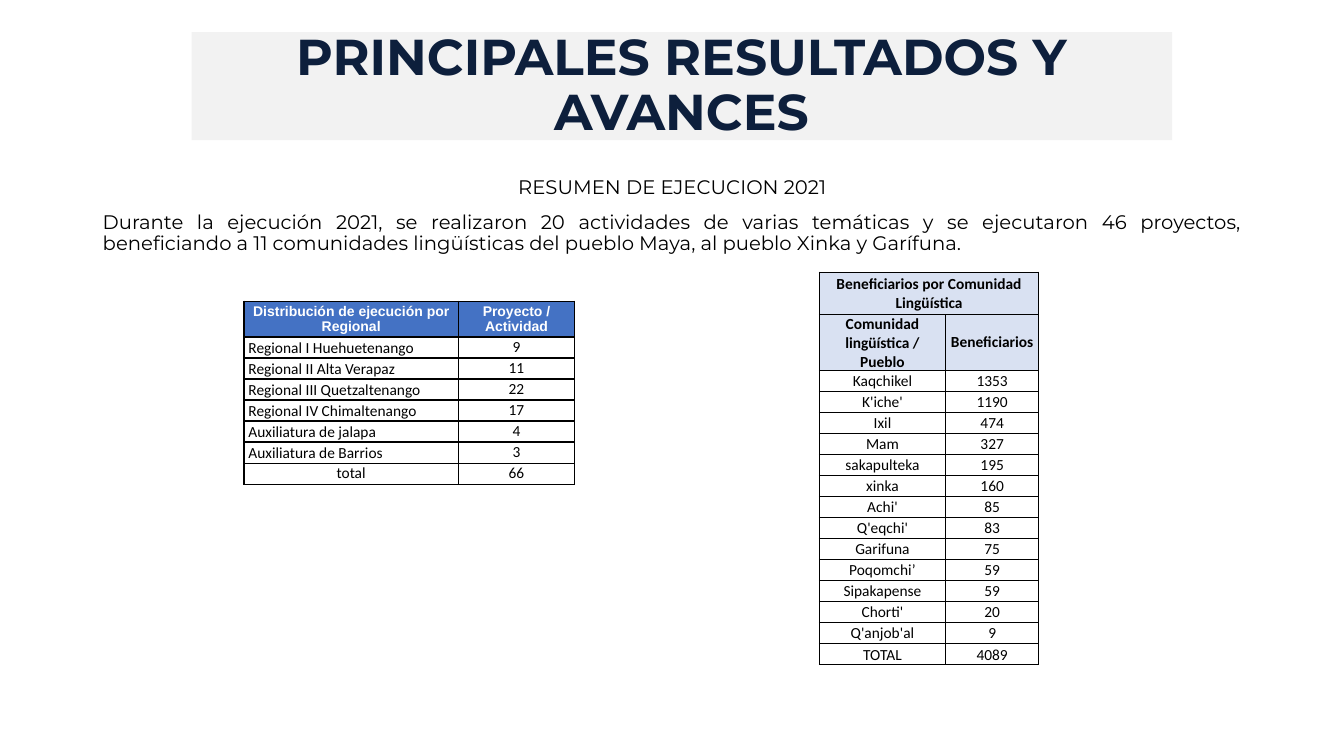
from dataclasses import dataclass

import lxml.etree
import pptx
import pptx.dml.color
import pptx.enum.shapes
import pptx.enum.text
import pptx.oxml.ns
import pptx.util

Cm, Pt = pptx.util.Cm, pptx.util.Pt
RGBColor = pptx.dml.color.RGBColor
PP_ALIGN = pptx.enum.text.PP_ALIGN
ANCHOR = pptx.enum.text.MSO_ANCHOR
qn = pptx.oxml.ns.qn

BLACK = RGBColor(0x00, 0x00, 0x00)
WHITE = RGBColor(0xFF, 0xFF, 0xFF)
NAVY = RGBColor(0x0D, 0x1F, 0x3C)
LIGHT_GREY = RGBColor(0xF2, 0xF2, 0xF2)
BLUE = RGBColor(0x44, 0x72, 0xC4)
PALE_BLUE = RGBColor(0xD9, 0xE1, 0xF2)

ROW_HEIGHT = 0.53
CELL_MARGIN = 0.11


@dataclass(frozen=True)
class TextStyle:
    font: str
    size: float
    color: RGBColor
    bold: bool = False


@dataclass(frozen=True)
class Paragraph:
    text: str
    align: PP_ALIGN
    space_before: float = 0


@dataclass(frozen=True)
class TableData:
    """Lengths are in centimetres; a header of one text spans the whole row."""
    left: float
    top: float
    col_widths: tuple[float, ...]
    headers: tuple[tuple[str, ...], ...]
    header_height: float
    header_style: TextStyle
    header_fill: RGBColor
    rows: tuple[tuple[str, int], ...]
    total: tuple[str, int]
    label_align: PP_ALIGN
    label_anchor: ANCHOR
    total_anchor: ANCHOR


TITLE_STYLE = TextStyle("Montserrat", 36, NAVY, True)
BODY_STYLE = TextStyle("Montserrat", 14, BLACK)
CELL_STYLE = TextStyle("Calibri", 11, BLACK)

TITLE = (Paragraph("PRINCIPALES RESULTADOS Y AVANCES", PP_ALIGN.CENTER),)
SUMMARY = (
    Paragraph("RESUMEN DE EJECUCION 2021", PP_ALIGN.CENTER),
    Paragraph("Durante la ejecución 2021, se realizaron 20 actividades de varias "
              "temáticas y se ejecutaron 46 proyectos, beneficiando a 11 comunidades "
              "lingüísticas del pueblo Maya, al pueblo Xinka y Garífuna.",
              PP_ALIGN.JUSTIFY, 10),
)

REGIONS = TableData(
    left=6.15, top=7.59, col_widths=(5.4, 2.93),
    headers=(("Distribución de ejecución por Regional", "Proyecto / Actividad"),),
    header_height=0.9,
    header_style=TextStyle("Arial", 10, WHITE, True),
    header_fill=BLUE,
    rows=(
        ("Regional I Huehuetenango", 9),
        ("Regional II Alta Verapaz", 11),
        ("Regional III Quetzaltenango", 22),
        ("Regional IV Chimaltenango", 17),
        ("Auxiliatura de jalapa", 4),
        ("Auxiliatura de Barrios", 3),
    ),
    total=("total", 66),
    label_align=PP_ALIGN.LEFT,
    label_anchor=ANCHOR.BOTTOM,
    total_anchor=ANCHOR.MIDDLE,
)

COMMUNITIES = TableData(
    left=20.65, top=6.86, col_widths=(3.18, 2.35),
    headers=(("Beneficiarios por Comunidad Lingüística",),
             ("Comunidad lingüística / Pueblo", "Beneficiarios")),
    header_height=1.07,
    header_style=TextStyle("Calibri", 11, BLACK, True),
    header_fill=PALE_BLUE,
    rows=(
        ("Kaqchikel", 1353),
        ("K'iche'", 1190),
        ("Ixil", 474),
        ("Mam", 327),
        ("sakapulteka", 195),
        ("xinka", 160),
        ("Achi'", 85),
        ("Q'eqchi'", 83),
        ("Garifuna", 75),
        ("Poqomchi’", 59),
        ("Sipakapense", 59),
        ("Chorti'", 20),
        ("Q'anjob'al", 9),
    ),
    total=("TOTAL", 4089),
    label_align=PP_ALIGN.CENTER,
    label_anchor=ANCHOR.MIDDLE,
    total_anchor=ANCHOR.BOTTOM,
)


def add_run(p, text: str, style: TextStyle) -> None:
    r = p.add_run()
    r.text = text
    r.font.name = style.font
    r.font.size = Pt(style.size)
    r.font.bold = style.bold
    r.font.color.rgb = style.color


def add_title_band(slide) -> None:
    sp = slide.shapes.add_shape(pptx.enum.shapes.MSO_SHAPE.RECTANGLE,
                                Cm(4.83), Cm(0.81), Cm(24.71), Cm(2.72))
    sp.shadow.inherit = False
    sp.fill.solid()
    sp.fill.fore_color.rgb = LIGHT_GREY
    sp.line.fill.background()


def add_text(slide, box: tuple[float, float, float, float],
             paragraphs: tuple[Paragraph, ...], style: TextStyle,
             anchor: ANCHOR) -> None:
    tf = slide.shapes.add_textbox(*map(Cm, box)).text_frame
    tf.word_wrap = True
    tf.vertical_anchor = anchor
    for i, paragraph in enumerate(paragraphs):
        p = tf.add_paragraph() if i else tf.paragraphs[0]
        p.alignment = paragraph.align
        p.line_spacing = 0.9
        p.space_before = Pt(paragraph.space_before)
        add_run(p, paragraph.text, style)


def set_borders(cell) -> None:
    tc_pr = cell._tc.get_or_add_tcPr()
    for side in ("lnL", "lnR", "lnT", "lnB"):
        ln = lxml.etree.SubElement(tc_pr, qn(f"a:{side}"), w=str(Pt(1)))
        fill = lxml.etree.SubElement(ln, qn("a:solidFill"))
        lxml.etree.SubElement(fill, qn("a:srgbClr"), val=str(BLACK))


def format_cell(cell, fill: RGBColor, anchor: ANCHOR) -> None:
    set_borders(cell)
    cell.fill.solid()
    cell.fill.fore_color.rgb = fill
    cell.vertical_anchor = anchor
    cell.margin_left = cell.margin_right = Cm(CELL_MARGIN)
    cell.margin_top = cell.margin_bottom = 0


def add_data_table(slide, data: TableData) -> None:
    records = (*data.headers, *data.rows, data.total)
    header_count = len(data.headers)
    heights = [data.header_height if i < header_count else ROW_HEIGHT
               for i in range(len(records))]
    table = slide.shapes.add_table(
        len(records), len(data.col_widths), Cm(data.left), Cm(data.top),
        Cm(sum(data.col_widths)), Cm(sum(heights))).table
    table.first_row = table.horz_banding = False
    for column, width in zip(table.columns, data.col_widths):
        column.width = Cm(width)

    for i, (record, height) in enumerate(zip(records, heights)):
        table.rows[i].height = Cm(height)
        is_header, is_total = i < header_count, i == len(records) - 1
        style = data.header_style if is_header else CELL_STYLE
        fill = data.header_fill if is_header else WHITE
        for j in range(len(data.col_widths)):
            is_label = j == 0 and not is_header and not is_total
            anchor = (data.total_anchor if is_total
                      else data.label_anchor if is_label else ANCHOR.MIDDLE)
            cell = table.cell(i, j)
            format_cell(cell, fill, anchor)
            if j < len(record):
                p = cell.text_frame.paragraphs[0]
                p.alignment = data.label_align if is_label else PP_ALIGN.CENTER
                add_run(p, str(record[j]), style)
        if len(record) == 1:
            table.cell(i, 0).merge(table.cell(i, len(data.col_widths) - 1))


def main() -> None:
    prs = pptx.Presentation()
    prs.slide_width, prs.slide_height = Cm(33.87), Cm(19.05)
    slide = prs.slides.add_slide(prs.slide_layouts[6])
    add_title_band(slide)
    add_text(slide, (4.83, 1.02, 24.69, 2.34), TITLE, TITLE_STYLE, ANCHOR.MIDDLE)
    add_text(slide, (2.34, 4.34, 29.21, 2.26), SUMMARY, BODY_STYLE, ANCHOR.TOP)
    for data in (REGIONS, COMMUNITIES):
        add_data_table(slide, data)
    prs.save("out.pptx")


if __name__ == "__main__":
    main()
